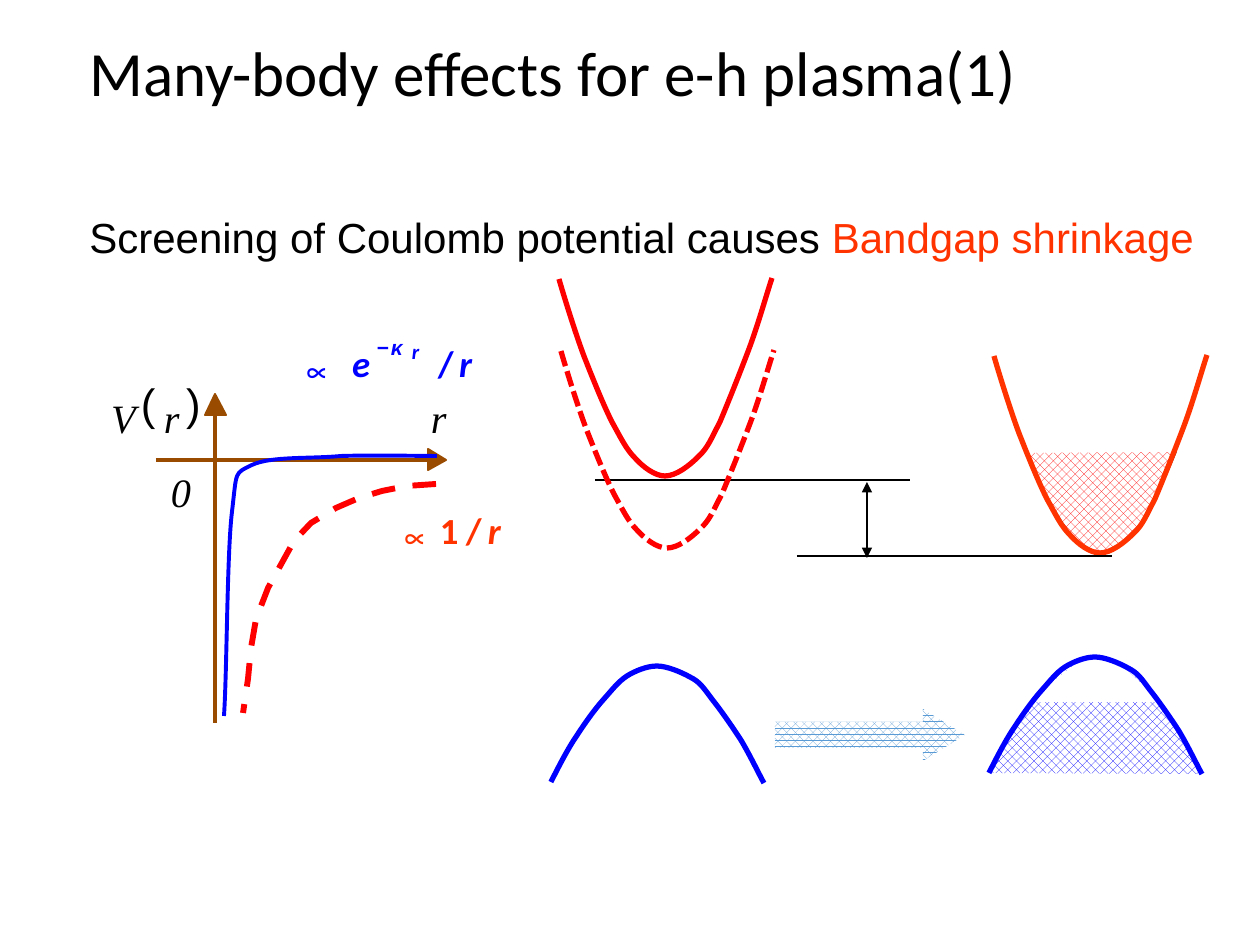
from lxml import etree
from pptx import Presentation
from pptx import util as u
from pptx.dml.color import RGBColor
from pptx.enum import dml, shapes, text
from pptx.oxml.ns import qn

PX = 914400 / 126  # EMU in one px

BLACK = RGBColor(0x00, 0x00, 0x00)
WHITE = RGBColor(0xFF, 0xFF, 0xFF)
RED = RGBColor(0xFF, 0x00, 0x00)
ORANGE = RGBColor(0xFF, 0x33, 0x00)
BLUE = RGBColor(0x00, 0x00, 0xFF)
BROWN = RGBColor(0x99, 0x4C, 0x00)
SKY = RGBColor(0x5B, 0x9B, 0xD5)

# Bezier points of the two bands, measured from their top left corner
CONDUCTION = [
    (0, 1), (4, 15), (16, 54), (25, 78), (34, 101), (44, 126), (53, 144),
    (62, 160), (67, 171), (76, 180), (84, 189), (96, 198), (106, 198),
    (117, 198), (130, 188), (139, 179), (149, 170), (152, 161), (161, 144),
    (169, 125), (181, 95), (190, 71), (199, 47), (208, 15), (213, 0)]
VALENCE = [
    (0, 116), (4, 108), (16, 84), (25, 71), (34, 57), (44, 43), (53, 33),
    (62, 23), (67, 16), (76, 10), (84, 5), (96, 0), (106, 0),
    (116, 0), (130, 6), (139, 11), (149, 16), (152, 21), (161, 33),
    (169, 43), (181, 60), (190, 74), (199, 89), (208, 108), (213, 117)]


def emu(*lengths):
    return [round(length * PX) for length in lengths]


class Board:
    """Holds the slide and draws each kind of element on it."""

    label_height = 2.87  # px per point of text

    def __init__(self, slide):
        self.shapes = slide.shapes

    def text(self, box, runs, size, font, bold=False, italic=False, label=False):
        frame = self.shapes.add_textbox(*emu(*box)).text_frame
        frame.word_wrap = False
        if label:
            frame.auto_size = text.MSO_AUTO_SIZE.SHAPE_TO_FIT_TEXT
            frame.margin_left = frame.margin_right = 0
            frame.margin_top = frame.margin_bottom = 0
        for words, color in runs:
            run = frame.paragraphs[0].add_run()
            run.text = words
            run.font.size, run.font.name = u.Pt(size), font
            run.font.bold, run.font.italic = bold, italic
            run.font.color.rgb = color
        return frame

    def label(self, words, left, top, width, size, font, color, bold=False, italic=False):
        box = (left, top, width, round(size * self.label_height))
        self.text(box, [(words, color)], size, font, bold, italic, label=True)

    def paint(self, shape, fill=None, pattern=None, line=None, width=0.75, dash=None):
        shape.shadow.inherit = False
        if pattern:
            shape.fill.patterned()
            shape.fill.pattern = pattern
            shape.fill.fore_color.rgb = fill
            shape.fill.back_color.rgb = WHITE
        elif fill is not None:
            shape.fill.solid()
            shape.fill.fore_color.rgb = fill
        else:
            shape.fill.background()
        if line is None:
            shape.line.fill.background()
            return
        shape.line.color.rgb = line
        shape.line.width = u.Pt(width)
        if dash:
            shape.line.dash_style = dash

    def outline(self, points, close=False, **style):
        builder = self.shapes.build_freeform(*points[0], scale=PX)
        builder.add_line_segments(points[1:], close=close)
        shape = builder.convert_to_shape()
        self.paint(shape, **style)
        return shape

    def curve(self, points, **style):
        """Outline whose points after the first are Bezier triples."""
        shape = self.outline(points, **style)
        segments = list(shape._element.iter(qn("a:lnTo")))
        path = segments[0].getparent()
        for i in range(0, len(segments), 3):
            bezier = etree.SubElement(path, qn("a:cubicBezTo"))
            for segment in segments[i:i + 3]:
                bezier.append(segment[0])
                path.remove(segment)

    def band(self, points, left, top, scale_x=1, scale_y=1, **style):
        self.curve([(left + round(x * scale_x), top + round(y * scale_y))
                    for x, y in points], **style)

    def arrow(self, box, adjustments, **style):
        shape = self.shapes.add_shape(shapes.MSO_SHAPE.RIGHT_ARROW, *emu(*box))
        for i, value in enumerate(adjustments):
            shape.adjustments[i] = value
        self.paint(shape, **style)

    def line(self, start, end, color=BLACK, width=0.75, heads=False):
        link = self.shapes.add_connector(
            shapes.MSO_CONNECTOR.STRAIGHT, *emu(*start, *end))
        link.line.color.rgb = color
        link.line.width = u.Pt(width)
        if heads:
            for tag in ("a:headEnd", "a:tailEnd"):
                etree.SubElement(link.line._get_or_add_ln(), qn(tag), type="triangle")
        etree.SubElement(link._element.spPr, qn("a:effectLst"))


def draw_headings(board):
    title = board.text((77, -15, 1086, 183),
                       [("Many-body effects for e-h plasma(1)", BLACK)], 36, "Calibri")
    title.word_wrap = True
    title.vertical_anchor = text.MSO_ANCHOR.MIDDLE
    title.paragraphs[0].line_spacing = 0.9
    board.text((77, 205, 1142, 63),
               [("Screening of Coulomb potential causes ", BLACK),
                ("Bandgap shrinkage", ORANGE)], 24, "Arial")


def draw_potential(board):
    # Axes
    axis = dict(fill=BROWN, line=BROWN, width=1.13)
    board.outline([(446, 460), (428, 470), (428, 449)], close=True, **axis)
    board.line((156, 460), (428, 460), BROWN, 2.25)
    board.outline([(215, 394), (226, 415), (205, 415)], close=True, **axis)
    board.line((215, 415), (215, 723), BROWN, 2.25)

    # Bare and screened potential
    board.outline([(436, 484), (407, 486), (382, 491), (359, 498), (336, 508), (311, 523),
                   (294, 541), (268, 588), (256, 619), (251, 648), (248, 679), (243, 713)],
                  line=RED, width=3.38, dash=dml.MSO_LINE.DASH)
    board.curve([(437, 456), (421, 456), (372, 455), (341, 456), (310, 459),
                 (271, 456), (252, 465), (234, 474), (237, 470), (232, 512),
                 (227, 553), (227, 673), (224, 716)], line=BLUE, width=2.25)

    # Axis labels
    for bracket, left in (("(", 141), (")", 186)):
        board.label(bracket, left, 377, 19, 25, "Arial", BLACK)
    for symbol, left, top, width in (("V", 111, 393, 32), ("r", 164, 393, 20),
                                     ("r", 431, 393, 20), ("0", 171, 467, 25)):
        board.label(symbol, left, top, width, 23, "Times New Roman", BLACK, italic=True)

    # Formulas
    for symbol, left, top, width, size, font, color, italic in (
            ("∝", 399, 512, 33, 21, "Arial", ORANGE, False),
            ("1", 440, 508, 23, 21, "Calibri", ORANGE, False),
            ("/", 466, 508, 13, 21, "Calibri", ORANGE, False),
            ("r", 488, 508, 18, 21, "Calibri", ORANGE, True),
            ("∝", 300, 346, 33, 21, "Arial", BLUE, False),
            ("e", 352, 341, 20, 21, "Calibri", BLUE, True),
            ("−", 377, 335, 15, 12, "Arial", BLUE, False),
            ("κ", 391, 335, 15, 12, "Arial", BLUE, True),
            ("r", 412, 338, 10, 12, "Calibri", BLUE, True),
            ("/", 438, 341, 13, 21, "Calibri", BLUE, False),
            ("r", 459, 341, 18, 21, "Calibri", BLUE, True)):
        board.label(symbol, left, top, width, size, font, color, bold=True, italic=italic)


def draw_bands(board):
    half = dml.MSO_PATTERN.PERCENT_50

    # Bands before the shift
    board.band(VALENCE, 551, 666, line=BLUE, width=3)
    board.band(CONDUCTION, 559, 278, line=RED, width=3)

    # Filled bands after the shift
    board.band(VALENCE, 989, 657, fill=BLUE, pattern=half)
    board.band(CONDUCTION, 1027, 452, 0.7, 0.51, fill=RED, pattern=half, line=BLACK)
    board.band(CONDUCTION, 994, 355, line=ORANGE, width=3)
    board.band(VALENCE, 1036, 659, 0.57, 0.37, fill=WHITE)
    board.band(VALENCE, 989, 657, line=BLUE, width=3)

    # Transition and size of the shrinkage
    board.arrow((775, 709, 190, 52), (0.5, 0.81),
                fill=SKY, pattern=dml.MSO_PATTERN.PERCENT_70)
    board.line((595, 480), (910, 480))
    board.line((797, 556), (1112, 556))
    board.line((867, 482), (867, 558), heads=True)
    board.band(CONDUCTION, 561, 350, line=RED, width=3, dash=dml.MSO_LINE.SQUARE_DOT)


def main():
    deck = Presentation()
    deck.slide_width, deck.slide_height = u.Inches(10), u.Inches(7.5)
    board = Board(deck.slides.add_slide(deck.slide_layouts[6]))
    draw_headings(board)
    draw_potential(board)
    draw_bands(board)
    deck.save("out.pptx")


if __name__ == "__main__":
    main()
